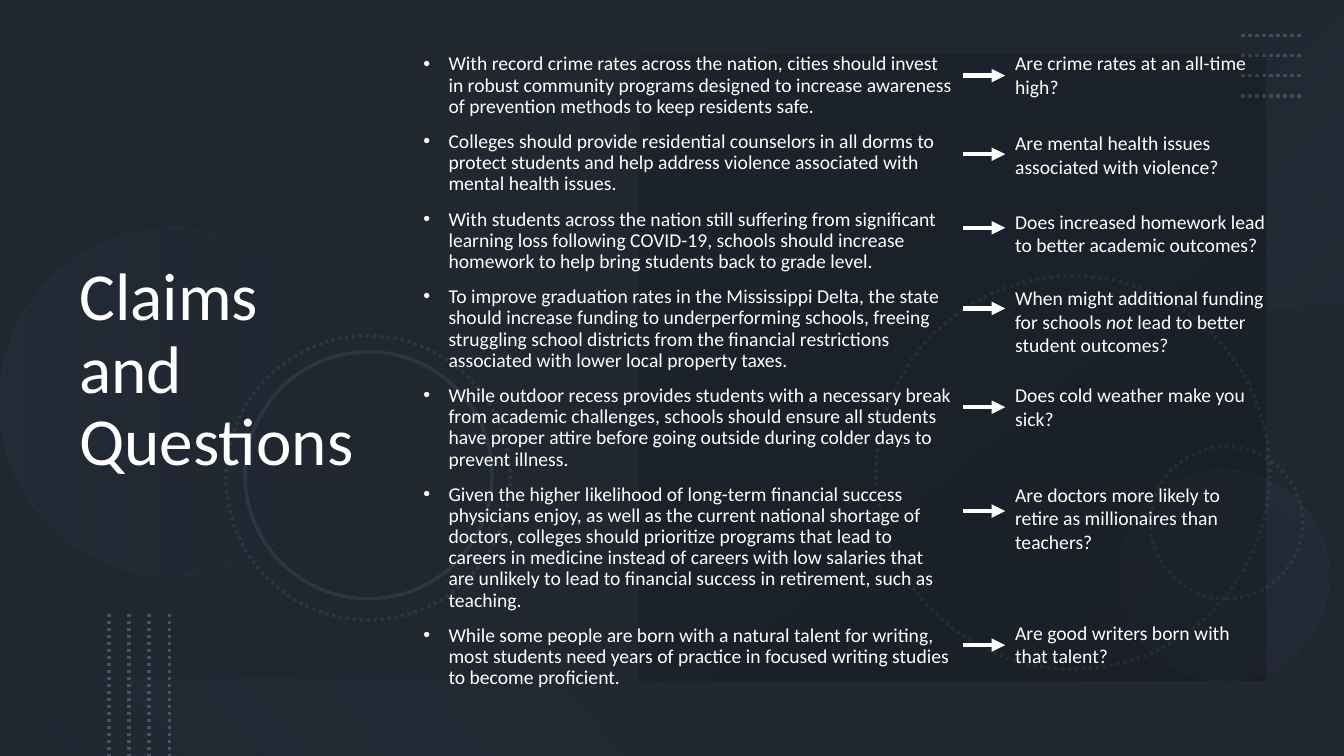
from lxml import etree
from pptx import Presentation
from pptx.dml.color import RGBColor
from pptx.enum.dml import MSO_LINE
from pptx.enum.shapes import MSO_CONNECTOR, MSO_SHAPE
from pptx.enum.text import MSO_ANCHOR, PP_ALIGN
from pptx.oxml.ns import qn
from pptx.util import Inches, Pt

RECT, OVAL = MSO_SHAPE.RECTANGLE, MSO_SHAPE.OVAL
STRAIGHT, DOTTED = MSO_CONNECTOR.STRAIGHT, MSO_LINE.ROUND_DOT
LEFT, TOP, MIDDLE = PP_ALIGN.LEFT, MSO_ANCHOR.TOP, MSO_ANCHOR.MIDDLE

WIDE, HIGH = 13.33, 7.5
FONT, WHITE, BLACK = "Calibri", "FFFFFF", "000000"
SLATE, NAVY, STEEL = "44546A", "222A35", "333F50"
RING, TOP_DOTS, LOW_DOTS = "2C3540", "404B5A", "465262"

CLAIMS = [
    "With record crime rates across the nation, cities should invest in robust community programs "
    "designed to increase awareness of prevention methods to keep residents safe.",
    "Colleges should provide residential counselors in all dorms to protect students and help "
    "address violence associated with mental health issues.",
    "With students across the nation still suffering from significant learning loss following "
    "COVID-19, schools should increase homework to help bring students back to grade level.",
    "To improve graduation rates in the Mississippi Delta, the state should increase funding to "
    "underperforming schools, freeing struggling school districts from the financial restrictions "
    "associated with lower local property taxes.",
    "While outdoor recess provides students with a necessary break from academic challenges, "
    "schools should ensure all students have proper attire before going outside during colder "
    "days to prevent illness.",
    "Given the higher likelihood of long-term financial success physicians enjoy, as well as the "
    "current national shortage of doctors, colleges should prioritize programs that lead to "
    "careers in medicine instead of careers with low salaries that are unlikely to lead to "
    "financial success in retirement, such as teaching.",
    "While some people are born with a natural talent for writing, most students need years of "
    "practice in focused writing studies to become proficient.",
]

# top, arrow height, width, text height, question (asterisks mark italics)
QUESTIONS = [
    (0.46, 0.75, 2.58, 0.57, "Are crime rates at an all-time high?"),
    (1.25, 1.53, 2.34, 0.57, "Are mental health issues associated with violence?"),
    (2.03, 2.26, 2.82, 0.57, "Does increased homework lead to better academic outcomes?"),
    (2.79, 3.06, 2.82, 0.81,
     "When might additional funding for schools *not* lead to better student outcomes?"),
    (3.75, 4.04, 2.58, 0.57, "Does cold weather make you sick?"),
    (4.74, 5.07, 2.46, 0.81, "Are doctors more likely to retire as millionaires than teachers?"),
    (6.11, 6.4, 2.46, 0.57, "Are good writers born with that talent?"),
]


def color(value):
    return RGBColor.from_string(value)


def set_all(target, values):
    for name, value in values.items():
        setattr(target, name, value)


def add_color(parent, value, opacity):
    node = etree.SubElement(parent, qn("a:srgbClr"), val=value)
    etree.SubElement(node, qn("a:alpha"), val=str(opacity * 1000))


def add_shape(page, kind, box, rotation=0):
    shape = page.shapes.add_shape(kind, *map(Inches, box))
    shape.shadow.inherit = False
    shape.rotation = rotation
    shape.fill.background()
    shape.line.fill.background()
    return shape


def add_tint(page, kind, box, rotation, angle, stops):
    """Adds a borderless shape; stops hold position, colour and opacity in percent."""
    properties = add_shape(page, kind, box, rotation).fill._xPr
    old = properties.find(qn("a:noFill"))
    gradient = etree.Element(qn("a:gradFill"), rotWithShape="1")
    properties.replace(old, gradient)
    stop_list = etree.SubElement(gradient, qn("a:gsLst"))
    for position, value, opacity in stops:
        stop = etree.SubElement(stop_list, qn("a:gs"), pos=str(position * 1000))
        add_color(stop, value, opacity)
    etree.SubElement(gradient, qn("a:lin"), ang=str(angle * 60000), scaled="0")


def add_ring(page, left, top, size, rotation, dash):
    ring = add_shape(page, OVAL, (left, top, size, size), rotation)
    ring.line.color.rgb = color(RING)
    set_all(ring.line, {"width": Pt(2.5), "dash_style": dash})


def add_line(page, start, end, value, width, dash=None, arrow=False):
    line = page.shapes.add_connector(STRAIGHT, *map(Inches, (*start, *end)))
    line.line.color.rgb = color(value)
    set_all(line.line, {"width": Pt(width), "dash_style": dash})
    if arrow:
        etree.SubElement(line.line._get_or_add_ln(), qn("a:tailEnd"), type="triangle")
    etree.SubElement(line._element.spPr, qn("a:effectLst"))


def add_text(page, box, lines, size, anchor=TOP, **spacing):
    """Adds one paragraph per line and returns the paragraphs."""
    frame = page.shapes.add_textbox(*map(Inches, box)).text_frame
    set_all(frame, {"word_wrap": True, "vertical_anchor": anchor})
    for number, line in enumerate(lines):
        para = frame.add_paragraph() if number else frame.paragraphs[0]
        set_all(para, {"alignment": LEFT, **spacing})
        for index, part in enumerate(line.split("*")):
            for row, words in enumerate(part.split("\n")):
                if row:
                    para.add_line_break()
                span = para.add_run()
                span.text = words
                set_all(span.font, {"name": FONT, "size": Pt(size), "italic": index % 2 == 1})
                span.font.color.rgb = color(WHITE)
    return frame.paragraphs


def draw_backdrop(page, box):
    left, top, width, height = box
    add_tint(page, RECT, box, 0, 0, [(0, SLATE, 100), (100, SLATE, 100)])
    add_tint(page, RECT, box, 0, 0, [(0, BLACK, 53), (100, BLACK, 53)])
    add_tint(page, RECT, (left, top + height - 0.78, width / 2, 0.78), 180, 140,
             [(10, NAVY, 10), (100, "8497B0", 0)])
    add_ring(page, left + 8.69, top + 2.74, 3.9, 75, DOTTED)
    add_ring(page, left + 11.41, top + 4.43, 1.51, 270, DOTTED)
    add_tint(page, OVAL, (left, top + 2.27, 3.44, 3.44), 270, 90,
             [(0, STEEL, 20), (100, NAVY, 10)])
    add_tint(page, OVAL, (left + 11.1, top + 4.67, 2.08, 2.08), 210, 90,
             [(0, STEEL, 10), (100, STEEL, 20)])
    add_ring(page, left + 2.24, top + 3.33, 2.82, 75, DOTTED)
    add_ring(page, left + 2.43, top + 3.49, 2.45, 75, None)
    add_tint(page, RECT, (left + 11.42, top + 1.14, 3.06, 0.78), 270, 140,
             [(0, "ADB9CA", 0), (100, STEEL, 10)])


def draw_dots(page, box, upright, value):
    """Draws four dotted lines spread evenly over the box."""
    left, top, width, height = box
    for step in range(4):
        if upright:
            x = left + width * step / 3
            start, end = (x, top), (x, top + height)
        else:
            y = top + height * step / 3
            start, end = (left, y), (left + width, y)
        add_line(page, start, end, value, 2.5, DOTTED)


def draw_title(page, box):
    add_text(page, box, ["Claims\nand \nQuestions"], 48, MIDDLE, line_spacing=0.9)


def draw_claims(page, box):
    paras = add_text(page, box, CLAIMS, 14, MIDDLE, line_spacing=0.9, space_before=Pt(10))
    for para in paras:
        properties = para._p.get_or_add_pPr()
        properties.set("marL", str(Inches(0.25)))
        properties.set("indent", str(-Inches(0.25)))
        etree.SubElement(properties, qn("a:buFont"), typeface="Arial")
        etree.SubElement(properties, qn("a:buChar"), char="•")


def draw_questions(page, box):
    left, top, arrow_width, _ = box
    text_left = left + arrow_width
    for text_top, arrow_top, width, height, question in QUESTIONS:
        add_text(page, (text_left, top + text_top, width, height), [question], 14)
        y = top + arrow_top
        add_line(page, (left, y), (text_left, y), WHITE, 3.25, arrow=True)


def main():
    deck = Presentation()
    set_all(deck, {"slide_width": Inches(WIDE), "slide_height": Inches(HIGH)})
    page = deck.slides.add_slide(deck.slide_layouts[6])
    draw_backdrop(page, (0, 0, WIDE, HIGH))
    draw_dots(page, (12.31, 0.35, 0.6, 0.6), False, TOP_DOTS)
    draw_dots(page, (1.08, 6.09, 0.6, 1.41), True, LOW_DOTS)
    draw_title(page, (0.69, 0.69, 3.39, 5.99))
    add_tint(page, RECT, (6.34, 0.54, 6.21, 6.21), 90, 140, [(0, BLACK, 20), (100, BLACK, 10)])
    draw_claims(page, (4.1, 0.69, 5.45, 5.99))
    draw_questions(page, (9.55, 0, 0.42, HIGH))
    deck.save("out.pptx")


if __name__ == "__main__":
    main()
